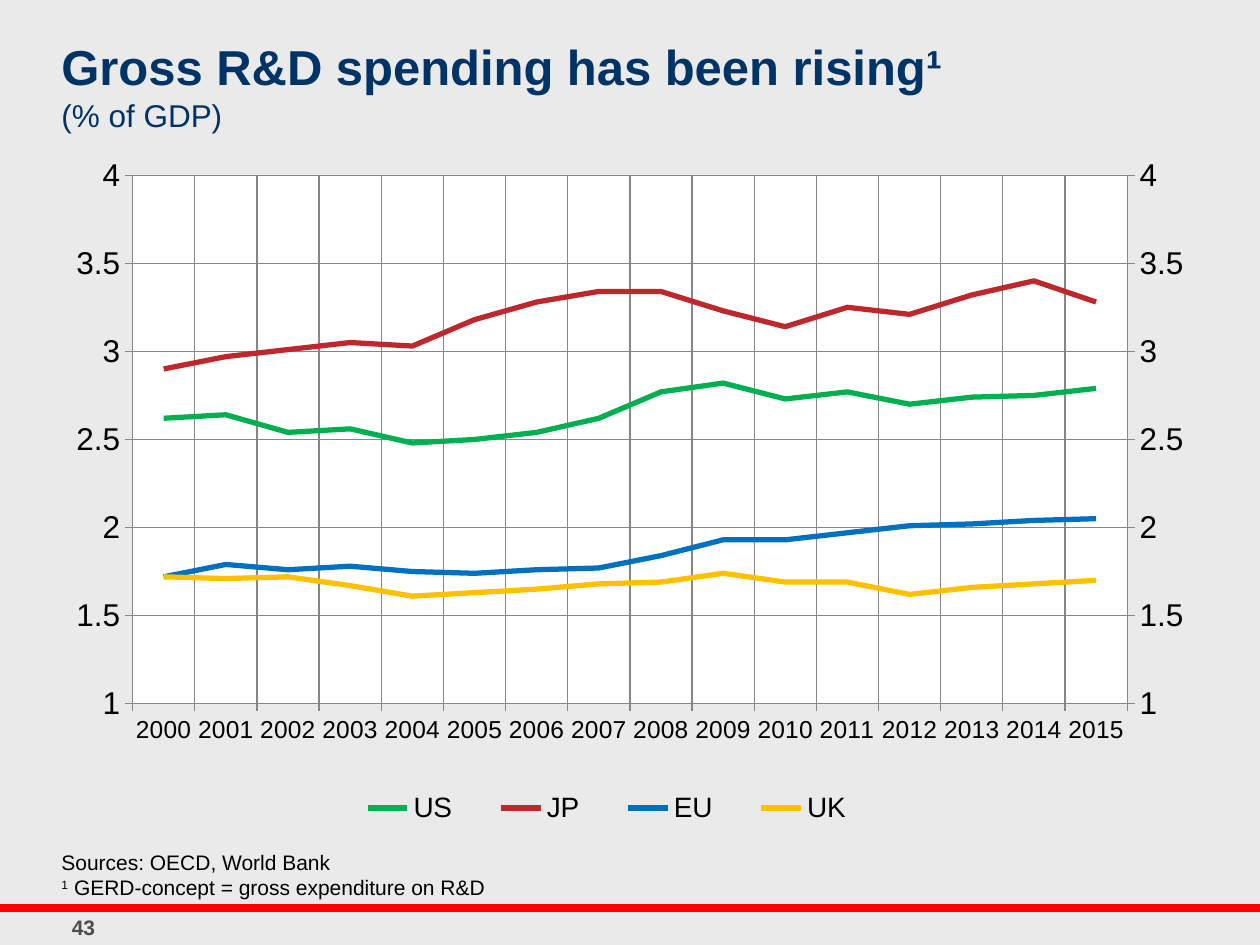
from copy import deepcopy

from lxml.etree import SubElement
from pptx import Presentation
from pptx.chart.data import CategoryChartData
from pptx.dml.color import RGBColor
from pptx.enum.chart import XL_CHART_TYPE, XL_LEGEND_POSITION, XL_TICK_MARK
from pptx.enum.shapes import MSO_CONNECTOR
from pptx.enum.text import MSO_ANCHOR, PP_ALIGN
from pptx.oxml import parse_xml
from pptx.oxml.ns import nsdecls, qn
from pptx.util import Pt

PX = 914400 / 126
THEME = {
    "font": "Arial",
    "background": RGBColor.from_string("EAEAEA"),
    "title": RGBColor.from_string("003366"),
    "text": RGBColor.from_string("000000"),
    "number": RGBColor.from_string("4D4D4D"),
    "rule": RGBColor.from_string("FF0000"),
    "grid": RGBColor.from_string("868686"),
    "title_size": Pt(28),
    "body_size": Pt(18),
    "legend_size": Pt(16),
    "year_size": Pt(14),
    "note_size": Pt(12),
}
YEARS = [str(year) for year in range(2000, 2016)]
SPENDING = {
    "US": ("00B050", [2.62, 2.64, 2.54, 2.56, 2.48, 2.5, 2.54, 2.62,
                      2.77, 2.82, 2.73, 2.77, 2.7, 2.74, 2.75, 2.79]),
    "JP": ("BE282C", [2.9, 2.97, 3.01, 3.05, 3.03, 3.18, 3.28, 3.34,
                      3.34, 3.23, 3.14, 3.25, 3.21, 3.32, 3.4, 3.28]),
    "EU": ("0070C0", [1.72, 1.79, 1.76, 1.78, 1.75, 1.74, 1.76, 1.77,
                      1.84, 1.93, 1.93, 1.97, 2.01, 2.02, 2.04, 2.05]),
    "UK": ("FFC000", [1.72, 1.71, 1.72, 1.67, 1.61, 1.63, 1.65, 1.68,
                      1.69, 1.74, 1.69, 1.69, 1.62, 1.66, 1.68, 1.7]),
}


def px(*lengths):
    """Turn px lengths into EMU."""
    return [round(length * PX) for length in lengths]


def set_font(font, size, color, bold=False):
    for key, value in {"name": THEME["font"], "size": THEME[size], "bold": bold}.items():
        setattr(font, key, value)
    font.color.rgb = THEME[color]


deck = Presentation()
deck.slide_width, deck.slide_height = px(1260, 945)
slide = deck.slides.add_slide(deck.slide_layouts[6])
slide.background.fill.solid()
slide.background.fill.fore_color.rgb = THEME["background"]

# Footer rule
rule = slide.shapes.add_connector(MSO_CONNECTOR.STRAIGHT, *px(0, 908, 1260, 908))
rule.line.color.rgb = THEME["rule"]
rule.line.width = Pt(4.5)
SubElement(rule._element.spPr, qn("a:effectLst"))

# Text frames
frames = {}
for role, box, frame_format in (
    ("number", (28, 908, 111, 37), {}),
    ("title", (49, 25, 1198, 103), {"margin_top": px(12)[0], "margin_bottom": 0}),
    ("notes", (49, 843, 992, 63), {"vertical_anchor": MSO_ANCHOR.BOTTOM}),
):
    frames[role] = slide.shapes.add_textbox(*px(*box)).text_frame
    for key, value in {"word_wrap": True, **frame_format}.items():
        setattr(frames[role], key, value)

number = frames["number"].paragraphs[0]
number.alignment = PP_ALIGN.CENTER
number_field = parse_xml(
    f'<a:fld {nsdecls("a")} id="{{B6F15528-21DE-4FAA-801E-634DDDAF4B2B}}" type="slidenum">'
    '<a:rPr lang="en-US" sz="1200" b="1"><a:solidFill>'
    f'<a:srgbClr val="{THEME["number"]}"/></a:solidFill>'
    f'<a:latin typeface="{THEME["font"]}"/></a:rPr><a:t>43</a:t></a:fld>')
number._p.append(number_field)
deck.element.set("firstSlideNum", "43")

title = frames["title"].paragraphs[0]
headline = title.add_run()
headline.text = "Gross R&D spending has been rising¹"
set_font(headline.font, "title_size", "title", True)
title.add_line_break()
unit = title.add_run()
unit.text = "(% of GDP)"
set_font(unit.font, "body_size", "title")

sources = frames["notes"].paragraphs[0]
footnote = frames["notes"].add_paragraph()
for key, value in {"marL": 91440, "indent": -91440}.items():
    footnote._p.get_or_add_pPr().set(key, str(value))
for paragraph, words, baseline in (
    (sources, "Sources: OECD, World Bank", 0),
    (footnote, "1\t", 30000),
    (footnote, "GERD-concept = gross expenditure on R&D", 0),
):
    run = paragraph.add_run()
    run.text = words
    set_font(run.font, "note_size", "text")
    run.font._element.set("baseline", str(baseline))

# Chart
spending_data = CategoryChartData()
spending_data.categories = YEARS
for region, (_, shares) in SPENDING.items():
    spending_data.add_series(region, shares)
chart = slide.shapes.add_chart(
    XL_CHART_TYPE.LINE, *px(49, 149, 1162, 690), spending_data).chart
set_font(chart.font, "body_size", "text")
chart.has_title = False
chart.has_legend = True
for key, value in {"position": XL_LEGEND_POSITION.BOTTOM, "include_in_layout": False}.items():
    setattr(chart.legend, key, value)
set_font(chart.legend.font, "legend_size", "text")

for series in chart.plots[0].series:
    series.smooth = False
    series.format.line.color.rgb = RGBColor.from_string(SPENDING[series.name][0])
    series.format.line.width = Pt(3)
chart.plots[0].vary_by_categories = False

for axis, size, axis_format in (
    (chart.category_axis, "year_size", {}),
    (chart.value_axis, "body_size",
     {"minimum_scale": 1, "maximum_scale": 4, "major_unit": 0.5}),
):
    for key, value in {"has_major_gridlines": True, "major_tick_mark": XL_TICK_MARK.OUTSIDE,
                       "minor_tick_mark": XL_TICK_MARK.NONE, **axis_format}.items():
        setattr(axis, key, value)
    set_font(axis.tick_labels.font, size, "text")
    for line in (axis.format.line, axis.major_gridlines.format.line):
        line.color.rgb = THEME["grid"]
        line.width = Pt(0.75)
chart.value_axis.tick_labels.number_format = "General"
chart.value_axis.tick_labels.number_format_is_linked = False

# The UK runs on a second value axis at the right
plot_area = chart._chartSpace.chart.plotArea
left_lines = plot_area.find(qn("c:lineChart"))
left_years, left_scale = (plot_area.find(qn(tag)) for tag in ("c:catAx", "c:valAx"))
if left_scale.find(qn("c:crossBetween")) is None:
    left_scale.find(qn("c:crosses")).addnext(
        parse_xml(f'<c:crossBetween {nsdecls("c")} val="between"/>'))
right_lines, right_years, right_scale = map(deepcopy, (left_lines, left_years, left_scale))
left_lines.remove(left_lines.findall(qn("c:ser"))[-1])
for extra in right_lines.findall(qn("c:ser"))[:-1]:
    right_lines.remove(extra)
for axis_id, new_id in zip(right_lines.findall(qn("c:axId")), ("5001", "5002")):
    axis_id.set("val", new_id)
for axis, values in (
    (right_years, {"axId": "5001", "crossAx": "5002", "delete": "1"}),
    (right_scale, {"axId": "5002", "crossAx": "5001", "axPos": "r", "crosses": "max"}),
):
    for tag, value in values.items():
        axis.find(qn(f"c:{tag}")).set("val", value)
    axis.remove(axis.find(qn("c:majorGridlines")))
left_lines.addnext(right_lines)
left_scale.addnext(right_scale)
right_scale.addnext(right_years)

plot_area.append(parse_xml(
    f'<c:spPr {nsdecls("c", "a")}><a:solidFill><a:srgbClr val="FFFFFF"/></a:solidFill>'
    f'<a:ln w="9525"><a:solidFill><a:srgbClr val="{THEME["grid"]}"/></a:solidFill></a:ln></c:spPr>'))

# Fixed places for the plot and the legend
legend = chart.legend._element
for owner, target, place in (
    (plot_area, '<c:layoutTarget val="inner"/>', (0.072, 0.038, 0.856, 0.766)),
    (legend, "", (0.24, 0.92, 0.48, 0.07)),
):
    for default in owner.findall(qn("c:layout")):
        owner.remove(default)
    sides = "".join(f'<c:{side} val="{share}"/>' for side, share in zip("xywh", place))
    layout = parse_xml(
        f'<c:layout {nsdecls("c")}><c:manualLayout>{target}<c:xMode val="edge"/>'
        f'<c:yMode val="edge"/>{sides}</c:manualLayout></c:layout>')
    owner.insert(1 if owner is legend else 0, layout)

deck.save("out.pptx")
